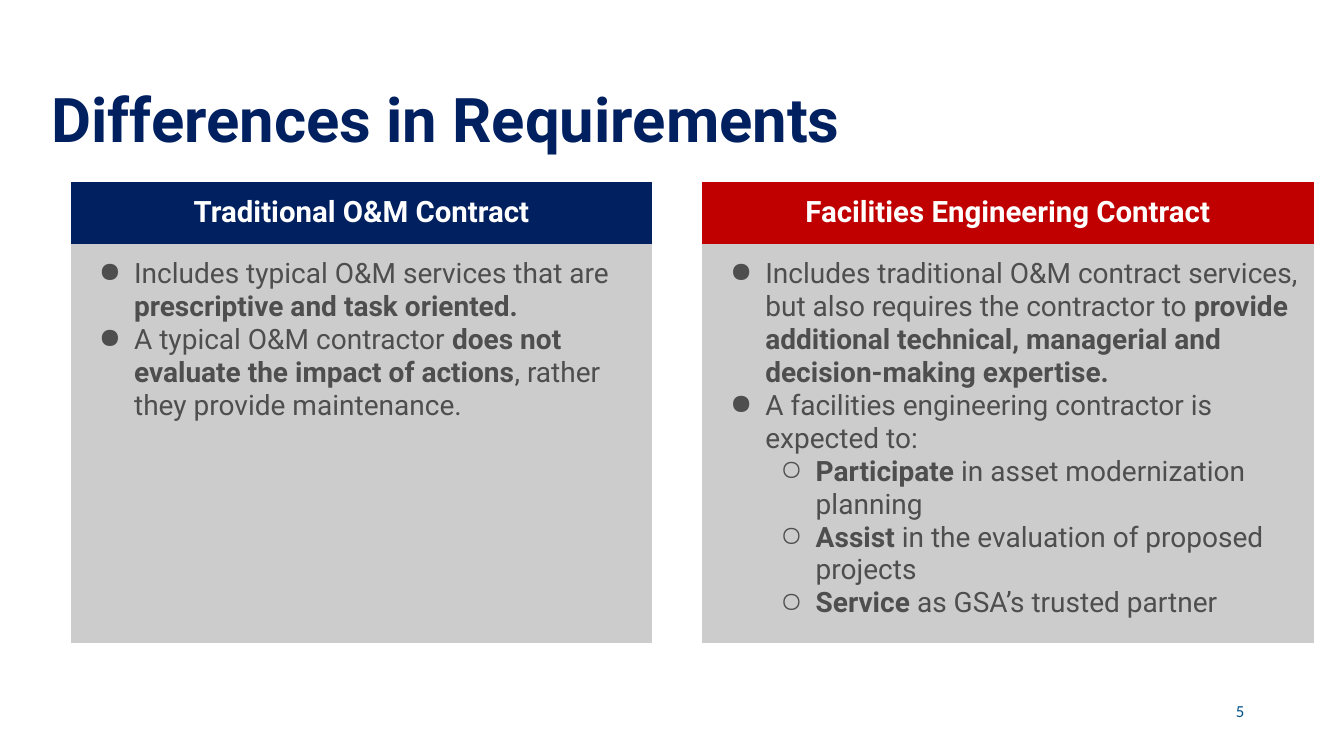
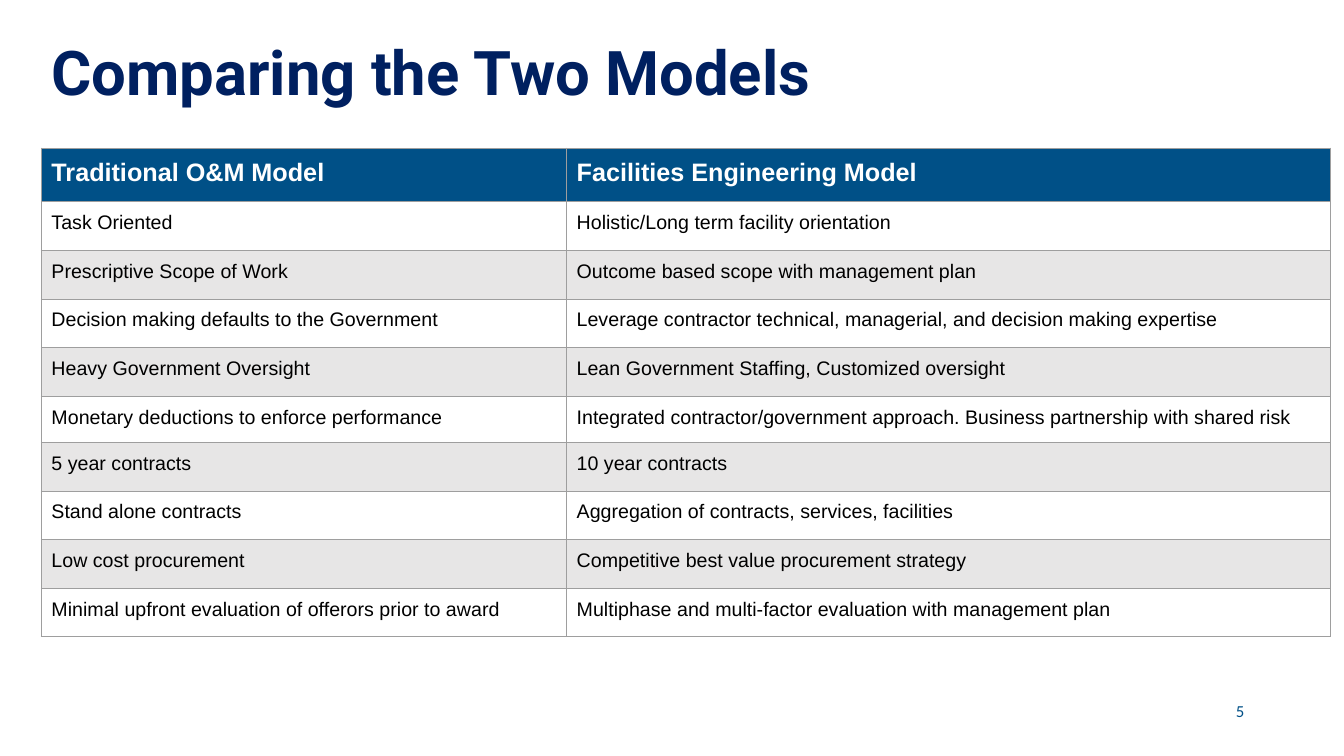
from dataclasses import dataclass

from lxml import etree
from pptx import Presentation, util as u
from pptx.dml.color import RGBColor
from pptx.enum import text
from pptx.oxml import ns


@dataclass(frozen=True)
class Theme:
    navy: str = "002060"
    red: str = "C00000"
    blue: str = "005087"
    white: str = "FFFFFF"
    black: str = "000000"
    ink: str = "4E4E4E"
    panel: str = "CCCCCC"
    band: str = "E7E6E6"
    rule: str = "9E9E9E"
    face: str = "Roboto"
    plain: str = "Arial"
    small: str = "Calibri"
    title: int = 44
    head: int = 21
    body: int = 20
    label: int = 18
    item: int = 14
    page: int = 12
    bare: str = "{2D5ABB26-0587-4C30-8999-92F81FD0307C}"


def add(node, tag, **marks):
    return etree.SubElement(node, ns.qn(tag), **marks)


class Deck:
    def __init__(self, theme):
        self.theme = theme
        self.show = Presentation()
        self.show.slide_width = u.Inches(13.33)
        self.show.slide_height = u.Inches(7.5)
        self.slide = None

    def wide(self, share):
        return round(self.show.slide_width * share / 100)

    def high(self, share):
        return round(self.show.slide_height * share / 100)

    def start(self, title, top, height):
        t = self.theme
        self.slide = self.show.slides.add_slide(self.show.slide_layouts[6])
        frame = self.box(3.08, top, 93.55, height, (0.1, 0.05))
        self.label(frame.paragraphs[0], title, t.face, t.title, t.navy, True)
        frame.paragraphs[0].line_spacing = 0.9
        frame = self.box(71.72, 90.67, 20.86, 6.67, (0, 0))
        self.label(frame.paragraphs[0], "5", t.small, t.page, t.blue)
        frame.paragraphs[0].alignment = text.PP_ALIGN.RIGHT

    def box(self, left, top, width, height, inset):
        shape = self.slide.shapes.add_textbox(
            self.wide(left), self.high(top), self.wide(width), self.high(height))
        frame = shape.text_frame
        frame.word_wrap = True
        frame.vertical_anchor = text.MSO_ANCHOR.MIDDLE
        frame.margin_left = frame.margin_right = u.Inches(inset[0])
        frame.margin_top = frame.margin_bottom = u.Inches(inset[1])
        return frame

    def label(self, para, words, face, size, color, bold=False):
        font = para.font
        font.name, font.size = face, u.Pt(size)
        font.color.rgb = RGBColor.from_string(color)
        parts = words.split("*")
        if len(parts) == 1:
            font.bold = bold
        for spot, part in enumerate(parts):
            if part:
                run = para.add_run()
                run.text = part
                if len(parts) > 1:
                    run.font.bold = spot % 2 == 1

    def table(self, left, top, cols, rows):
        grid = self.slide.shapes.add_table(
            len(rows), len(cols), self.wide(left), self.high(top),
            self.wide(sum(cols)), self.high(sum(rows))).table
        grid.first_row = grid.horz_banding = False
        style = next(grid._tbl.iter(ns.qn("a:tableStyleId")))
        style.text = self.theme.bare
        for col, share in zip(grid.columns, cols):
            col.width = self.wide(share)
        for row, share in zip(grid.rows, rows):
            row.height = self.high(share)
        return grid

    def cell(self, cell, color, inset, edge=None):
        cell.margin_left = cell.margin_right = u.Inches(inset)
        cell.margin_top = cell.margin_bottom = u.Inches(inset)
        if edge:
            props = cell._tc.get_or_add_tcPr()
            for side in ("a:lnL", "a:lnR", "a:lnT", "a:lnB"):
                fill = add(add(props, side, w=str(u.Pt(0.75))), "a:solidFill")
                add(fill, "a:srgbClr", val=edge)
        cell.fill.solid()
        cell.fill.fore_color.rgb = RGBColor.from_string(color)
        return cell.text_frame

    def bullet(self, para, level):
        para.level = level
        props = para._p.get_or_add_pPr()
        props.set("marL", str(u.Inches(0.5 * (level + 1))))
        props.set("indent", str(u.Inches(-0.35)))
        add(add(props, "a:buClr"), "a:srgbClr", val=self.theme.ink)
        add(props, "a:buChar", char="●○"[level])

    def panels(self, left, top, cols, rows, panels):
        t = self.theme
        grid = self.table(left, top, cols, rows)
        for row in range(2):
            self.cell(grid.cell(row, 1), t.white, 0.13)
        for col, (head, color, points) in zip((0, 2), panels):
            para = self.cell(grid.cell(0, col), color, 0.13).paragraphs[0]
            para.alignment = text.PP_ALIGN.CENTER
            self.label(para, head, t.face, t.head, t.white, True)
            frame = self.cell(grid.cell(1, col), t.panel, 0.13)
            for spot, (level, words) in enumerate(points):
                para = frame.add_paragraph() if spot else frame.paragraphs[0]
                self.bullet(para, level)
                self.label(para, words, t.face, t.body, t.ink)

    def compare(self, left, top, cols, rows, pairs):
        t = self.theme
        grid = self.table(left, top, cols, rows)
        for row, pair in enumerate(pairs):
            fill = t.white if row % 2 else t.band
            size, ink = t.item, t.black
            if row == 0:
                fill, size, ink = t.blue, t.label, t.white
            for col, words in enumerate(pair):
                frame = self.cell(grid.cell(row, col), fill, 0.1, t.rule)
                self.label(frame.paragraphs[0], words, t.plain, size, ink, row == 0)


def main():
    theme = Theme()
    deck = Deck(theme)

    deck.start("Differences in Requirements", 10.67, 11.07)
    deck.panels(5.25, 24.13, (43.29, 3.68, 45.54), (8.2, 52.67), (
        ("Traditional O&M Contract", theme.navy, (
            (0, "Includes typical O&M services that are *prescriptive and task oriented.*"),
            (0, "A typical O&M contractor *does not evaluate the impact of actions*, "
                "rather they provide maintenance."))),
        ("Facilities Engineering Contract", theme.red, (
            (0, "Includes traditional O&M contract services, but also requires the contractor to "
                "*provide additional technical, managerial and decision-making expertise.*"),
            (0, "A facilities engineering contractor is expected to:"),
            (1, "*Participate* in asset modernization planning"),
            (1, "*Assist* in the evaluation of proposed projects"),
            (1, "*Service* as GSA’s trusted partner")))))

    deck.start("Comparing the Two Models", 3.73, 12.53)
    pairs = (
        ("Traditional O&M Model", "Facilities Engineering Model"),
        ("Task Oriented", "Holistic/Long term facility orientation"),
        ("Prescriptive Scope of Work", "Outcome based scope with management plan"),
        ("Decision making defaults to the Government",
         "Leverage contractor technical, managerial, and decision making expertise"),
        ("Heavy Government Oversight", "Lean Government Staffing, Customized oversight"),
        ("Monetary deductions to enforce performance",
         "Integrated contractor/government approach. Business partnership with shared risk"),
        ("5 year contracts", "10 year contracts"),
        ("Stand alone contracts", "Aggregation of contracts, services, facilities"),
        ("Low cost procurement", "Competitive best value procurement strategy"),
        ("Minimal upfront evaluation of offerors prior to award",
         "Multiphase and multi-factor evaluation with management plan"))
    rows = [7.1] + [6.43] * 4 + [6.13] + [6.43] * 4
    deck.compare(3.08, 19.6, (39.08, 56.86), rows, pairs)

    deck.show.save("out.pptx")


if __name__ == "__main__":
    main()
